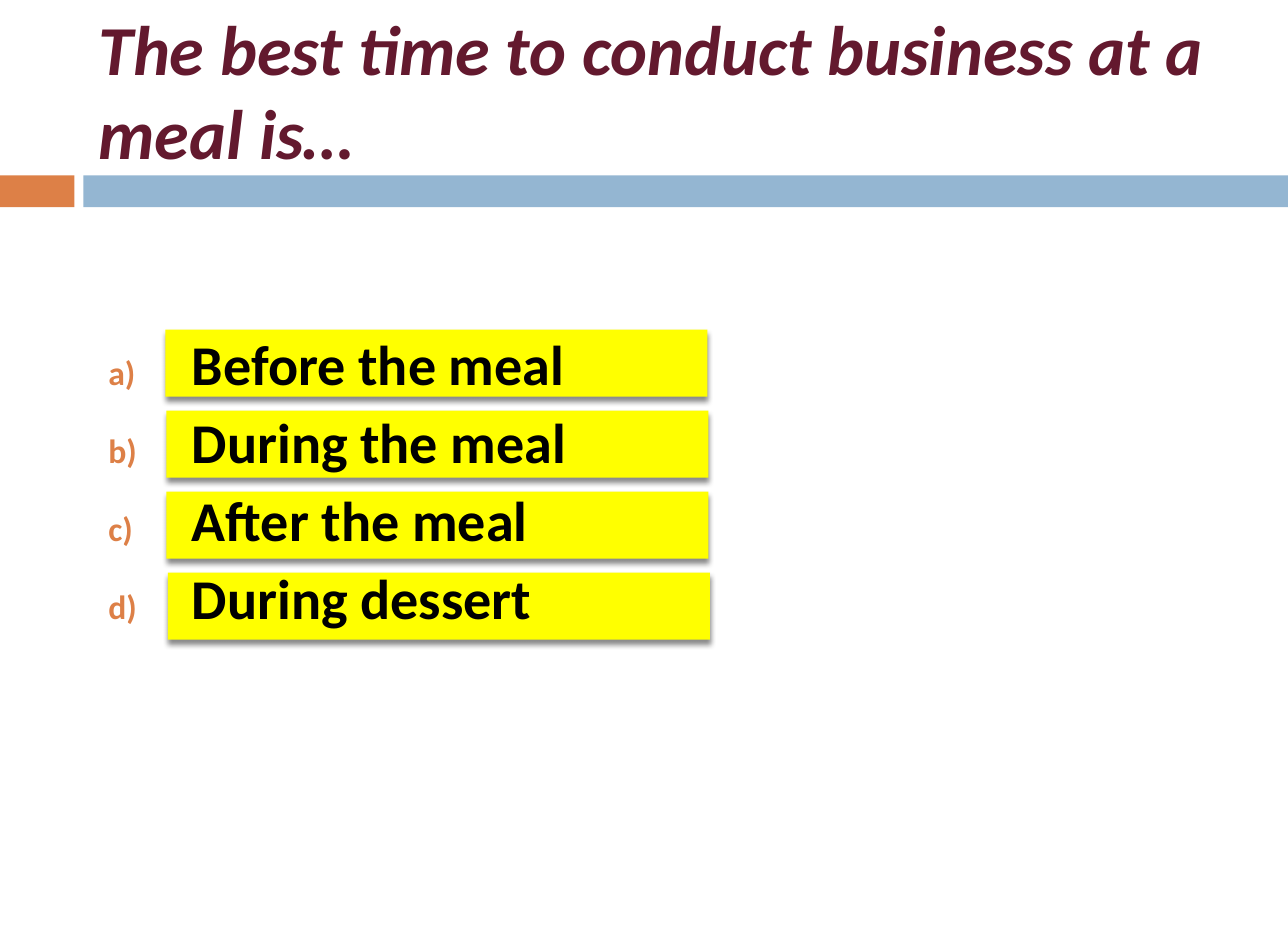
import pptx
import pptx.util
import pptx.oxml
import pptx.oxml.ns
import pptx.dml.color
import pptx.enum.shapes
import pptx.enum.text
from dataclasses import dataclass

Cm, Pt = pptx.util.Cm, pptx.util.Pt


@dataclass(frozen=True)
class Theme:
    font: str = "Calibri"
    wine: str = "63192E"
    black: str = "000000"
    white: str = "FFFFFF"
    orange: str = "DD8047"
    blue: str = "94B6D2"
    yellow: str = "FFFF00"
    title: int = 40
    body: int = 32


THEME = Theme()
TITLE = "The best time to conduct business at a meal is…"
MEALS = ["Before the meal", "During the meal", "After the meal", "During dessert"]
LEFTS = [3.33, 3.35, 3.35, 3.38]
TOP, STEP = 6.63, 1.63
INDENT = Cm(1.68)


def color(code):
    return pptx.dml.color.RGBColor.from_string(code)


def add_xml(parent, body):
    space = pptx.oxml.ns.nsdecls("a")
    root = pptx.oxml.parse_xml(f"<a:root {space}>{body}</a:root>")
    for item in list(root):
        parent.append(item)


def add_bar(slide, box, fill):
    kind = pptx.enum.shapes.MSO_SHAPE.RECTANGLE
    bar = slide.shapes.add_shape(kind, *map(Cm, box))
    bar.shadow.inherit = False
    bar.fill.solid()
    bar.fill.fore_color.rgb = color(fill)
    bar.line.fill.background()
    return bar


def add_shadow(bar):
    effect = bar._element.spPr.find(pptx.oxml.ns.qn("a:effectLst"))
    add_xml(effect, f'<a:outerShdw blurRad="{Pt(3)}" dist="{Pt(2.4)}" dir="5400000" '
            f'rotWithShape="0"><a:srgbClr val="{THEME.black}">'
            '<a:alpha val="45000"/></a:srgbClr></a:outerShdw>')


def add_text(slide, box, text):
    area = slide.shapes.add_textbox(*map(Cm, box))
    area.text_frame.word_wrap = True
    area.text_frame.text = text
    return area


def style(para, size, code, italic=False):
    for run in para.runs:
        font = run.font
        font.name, font.size = THEME.font, Pt(size)
        font.bold, font.italic = True, italic
        font.color.rgb = color(code)


def add_title(slide):
    frame = add_text(slide, (1.73, 0.43, 23.09, 2.74), TITLE).text_frame
    frame.vertical_anchor = pptx.enum.text.MSO_ANCHOR.MIDDLE
    style(frame.paragraphs[0], THEME.title, THEME.wine, italic=True)


def add_list(slide):
    area = add_text(slide, (1.93, 6.5, 23.32, 7.37), "\n".join(MEALS))
    area.line.color.rgb = color(THEME.white)
    area.line.width = Pt(2.25)
    for index, para in enumerate(area.text_frame.paragraphs):
        props = para._p.get_or_add_pPr()
        props.set("marL", str(INDENT))
        props.set("indent", str(-INDENT))
        add_xml(props, f'<a:buClr><a:srgbClr val="{THEME.orange}"/></a:buClr>'
                '<a:buSzPct val="60000"/><a:buFont typeface="+mj-lt"/>'
                '<a:buAutoNum type="alphaLcParenR"/>')
        if index:
            para.space_before = Pt(6)
        style(para, THEME.body, THEME.black)


def main():
    deck = pptx.Presentation()
    deck.slide_width, deck.slide_height = Cm(25.91), Cm(18.95)
    slide = deck.slides.add_slide(deck.slide_layouts[6])

    # Header band and title
    add_bar(slide, (0, 3.53, 1.5, 0.64), THEME.orange)
    add_bar(slide, (1.68, 3.53, 24.23, 0.64), THEME.blue)
    add_title(slide)

    # Answer bars with the lettered list on top
    for row, left in enumerate(LEFTS):
        add_shadow(add_bar(slide, (left, TOP + row * STEP, 10.9, 1.35), THEME.yellow))
    add_list(slide)

    deck.save("out.pptx")


if __name__ == "__main__":
    main()
